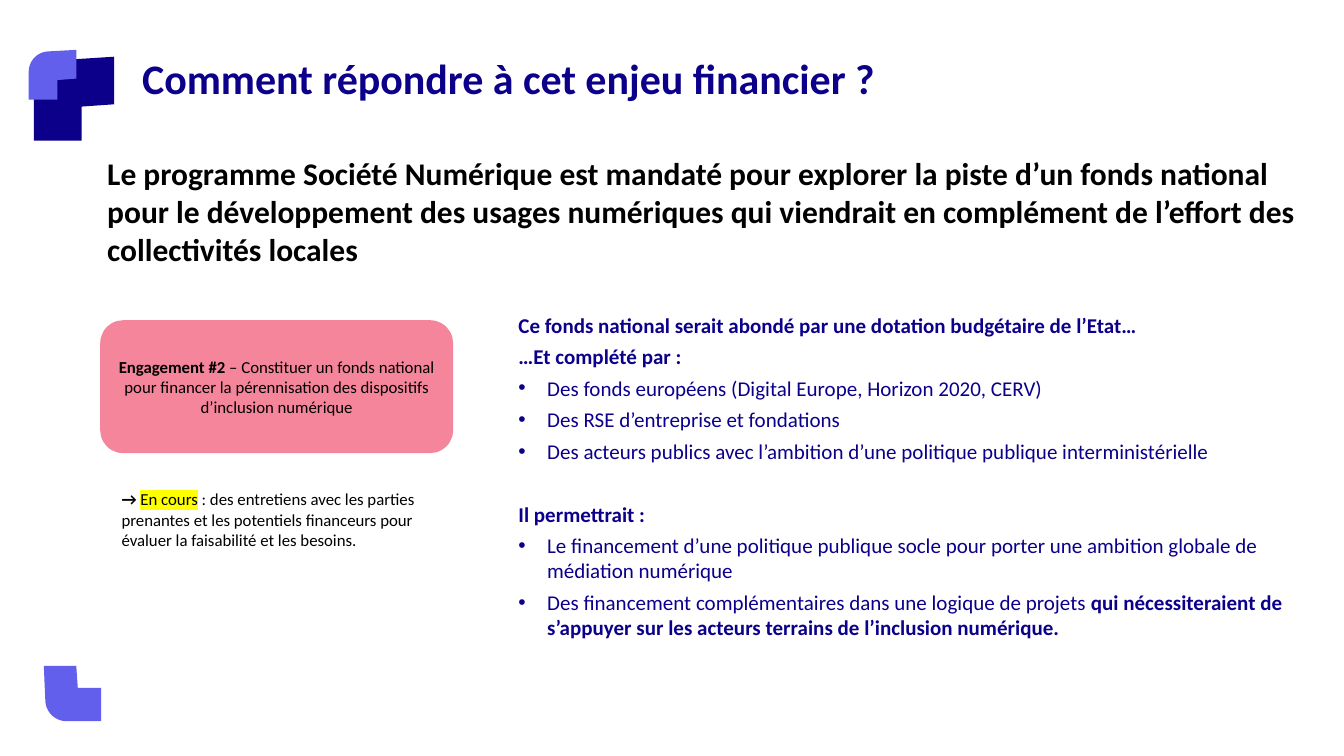
from dataclasses import dataclass
from math import cos, radians, sin

from lxml.etree import SubElement
from pptx import Presentation
from pptx.dml.color import RGBColor
from pptx.enum.shapes import MSO_SHAPE
from pptx.enum.text import MSO_ANCHOR, PP_ALIGN
from pptx.oxml.ns import qn
from pptx.util import Inches, Pt


@dataclass(frozen=True)
class Theme:
    font: str = "Calibri"
    navy: RGBColor = RGBColor(0x0C, 0x00, 0x8B)
    violet: RGBColor = RGBColor(0x61, 0x5F, 0xEC)
    pink: RGBColor = RGBColor(0xF5, 0x85, 0x9B)
    black: RGBColor = RGBColor(0, 0, 0)
    highlight: str = "FFFF00"
    title: int = 40
    lead: int = 30
    body: int = 20
    note: int = 16


theme = Theme()


def write(para, spans, size, color, after=0, before=0, bullet=False):
    """Fill a paragraph with (text, bold) spans in one size and colour."""
    para.space_before, para.space_after = Pt(before), Pt(after)
    if bullet:
        props = para._p.get_or_add_pPr()
        props.set("marL", str(Inches(0.38)))
        props.set("indent", str(-Inches(0.38)))
        bullet_color = SubElement(props, qn("a:buClr"))
        SubElement(bullet_color, qn("a:srgbClr"), val=str(color))
        SubElement(props, qn("a:buFont"), typeface="Arial")
        SubElement(props, qn("a:buChar"), char="•")
    font = para.font
    font.name, font.size, font.color.rgb = theme.font, Pt(size), color
    for text, bold in spans:
        span = para.add_run()
        span.text, span.font.bold = text, bold


def arc(x, y, radius, start):
    """Points of a quarter turn anticlockwise on the page, start in degrees."""
    turns = [radians(start + step * 10) for step in range(10)]
    return [(x + radius * cos(t), y - radius * sin(t)) for t in turns]


deck = Presentation()
deck.slide_width, deck.slide_height = Inches(17.78), Inches(10)
page = deck.slides.add_slide(deck.slide_layouts[5])

title = page.shapes.title
title.left, title.top = Inches(1.78), Inches(0.64)
title.width, title.height = Inches(15.78), Inches(0.89)
title.text_frame.vertical_anchor = MSO_ANCHOR.TOP
title_para = title.text_frame.paragraphs[0]
title_para.alignment = PP_ALIGN.LEFT
write(title_para, [("Comment répondre à cet enjeu financier ?", True)], theme.title, theme.navy)

# Decorative corner brackets
brackets = [
    (theme.navy, [(1.51, 0.75), *arc(0.89, 1.23, 0.44, 90),
                  (0.45, 1.86), (1.08, 1.86), (1.08, 1.41), (1.51, 1.38)]),
    (theme.violet, [(1.01, 0.66), *arc(0.65, 0.95, 0.27, 90),
                    (0.38, 1.32), (0.76, 1.32), (0.76, 1.06), (1.01, 1.04)]),
    (theme.violet, [(1.01, 8.81), (0.58, 8.81), *arc(0.88, 9.26, 0.28, 180),
                    (1.34, 9.54), (1.34, 9.1), (1.03, 9.1)]),
]
for color, points in brackets:
    corners = [(Inches(x), Inches(y)) for x, y in points]
    outline = page.shapes.build_freeform(*corners[0])
    outline.add_line_segments(corners[1:], close=True)
    bracket = outline.convert_to_shape()
    bracket.shadow.inherit = False
    bracket.fill.solid()
    bracket.fill.fore_color.rgb = color
    bracket.line.fill.background()

lead = page.shapes.add_textbox(Inches(1.32), Inches(1.99), Inches(16.31), Inches(0.89))
lead.text_frame.word_wrap = True
write(lead.text_frame.paragraphs[0],
      [("Le programme Société Numérique est mandaté pour explorer la piste d’un fonds national "
        "pour le développement des usages numériques qui viendrait en complément de l’effort "
        "des collectivités locales", True)], theme.lead, theme.black)

# Funding sources and uses: (spans, bulleted, space before)
fund_lines = [
    ([("Ce fonds national serait abondé par une dotation budgétaire de l’Etat…", True)], False, 0),
    ([("…Et complété par :", True)], False, 0),
    ([("Des fonds européens (Digital Europe, Horizon 2020, CERV)", False)], True, 0),
    ([("Des RSE d’entreprise et fondations", False)], True, 0),
    ([("Des acteurs publics avec l’ambition d’une politique publique interministérielle", False)],
     True, 0),
    ([("Il permettrait :", True)], False, 30),
    ([("Le financement d’une politique publique socle pour porter une ambition globale de "
       "médiation numérique", False)], True, 0),
    ([("Des financement complémentaires dans une logique de projets ", False),
      ("qui nécessiteraient de s’appuyer sur les acteurs terrains de l’inclusion numérique.",
       True)], True, 0),
]
fund = page.shapes.add_textbox(Inches(6.76), Inches(4.08), Inches(10.55), Inches(5.8)).text_frame
fund.word_wrap = True
for index, (spans, bullet, before) in enumerate(fund_lines):
    para = fund.add_paragraph() if index else fund.paragraphs[0]
    write(para, spans, theme.body, theme.navy, after=6, before=before, bullet=bullet)

commitment = page.shapes.add_shape(
    MSO_SHAPE.ROUNDED_RECTANGLE, Inches(1.34), Inches(4.25), Inches(4.64), Inches(1.73))
commitment.shadow.inherit = False
commitment.fill.solid()
commitment.fill.fore_color.rgb = theme.pink
commitment.line.color.rgb = theme.pink
commitment.line.width = Pt(2)
commitment.text_frame.word_wrap = True
commitment.text_frame.vertical_anchor = MSO_ANCHOR.MIDDLE
commitment_para = commitment.text_frame.paragraphs[0]
commitment_para.alignment = PP_ALIGN.CENTER
write(commitment_para,
      [("Engagement #2 ", True),
       ("– Constituer un fonds national pour financer la pérennisation des dispositifs "
        "d’inclusion numérique", False)], theme.note, theme.black)

progress = page.shapes.add_textbox(Inches(1.51), Inches(6.42), Inches(4.47), Inches(1.18))
progress.text_frame.word_wrap = True
progress_para = progress.text_frame.paragraphs[0]
write(progress_para,
      [("→ ", True), ("En cours", False),
       (" : des entretiens avec les parties prenantes et les potentiels financeurs pour "
        "évaluer la faisabilité et les besoins.", False)], theme.note, theme.black, after=6)
status_props = progress_para.runs[1]._r.get_or_add_rPr()
SubElement(SubElement(status_props, qn("a:highlight")), qn("a:srgbClr"), val=theme.highlight)

deck.save("out.pptx")
